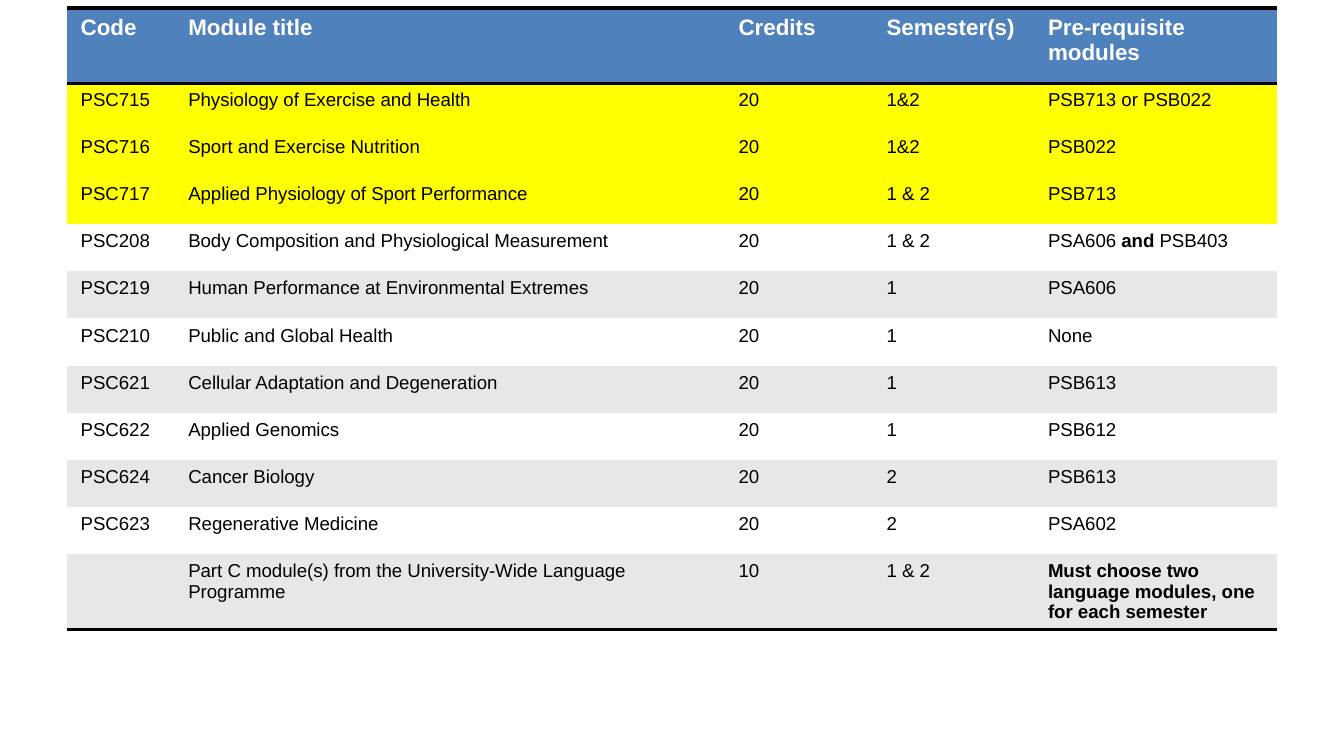
from pptx import Presentation
from pptx.dml.color import RGBColor as RGB
from pptx.oxml import parse_xml as to_xml
from pptx.oxml.ns import nsdecls, qn
from pptx.util import Inches, Pt

HUES = {"head": "4F81BD", "mark": "FFFF00", "band": "E7E7E7",
        "plain": "FFFFFF", "ink": "000000"}
COLS = [0.8, 4.09, 1.1, 1.2, 1.8]
HEAD = ["Code", "Module title", "Credits", "Semester(s)", "Pre-requisite modules"]
ROWS = [
    ["PSC715", "Physiology of Exercise and Health", "20", "1&2", "PSB713 or PSB022"],
    ["PSC716", "Sport and Exercise Nutrition", "20", "1&2", "PSB022"],
    ["PSC717", "Applied Physiology of Sport Performance", "20", "1 & 2", "PSB713"],
    ["PSC208", "Body Composition and Physiological Measurement", "20", "1 & 2",
     "PSA606 **and** PSB403"],
    ["PSC219", "Human Performance at Environmental Extremes", "20", "1", "PSA606"],
    ["PSC210", "Public and Global Health", "20", "1", "None"],
    ["PSC621", "Cellular Adaptation and Degeneration", "20", "1", "PSB613"],
    ["PSC622", "Applied Genomics", "20", "1", "PSB612"],
    ["PSC624", "Cancer Biology", "20", "2", "PSB613"],
    ["PSC623", "Regenerative Medicine", "20", "2", "PSA602"],
    ["", "Part C module(s) from the University-Wide Language Programme", "10", "1 & 2",
     "**Must choose two language modules, one for each semester**"],
]
MARKED = 3
NO_GRID = "{2D5ABB26-0587-4C30-8999-92F81FD0307C}"


def write(frame, text, size=10, hue="ink", bold=False, mark=None):
    para = frame.paragraphs[0]
    para.font.size = Pt(size)
    for i, part in enumerate(text.split("**")):
        if not part:
            continue
        run = para.add_run()
        run.text = part
        font = run.font
        font.name, font.size = "Arial", Pt(size)
        font.bold = bold or i % 2 == 1
        font.color.rgb = RGB.from_string(HUES[hue])
        if mark:
            fill = run._r.rPr.find(qn("a:solidFill"))
            fill.addnext(to_xml(
                f'<a:highlight {nsdecls("a")}><a:srgbClr val="{HUES[mark]}"/></a:highlight>'))


def rule(cell, sides):
    props = cell._tc.get_or_add_tcPr()
    for i, side in enumerate(sides):
        props.insert(i, to_xml(
            f'<a:ln{side} {nsdecls("a")} w="{Pt(2)}"><a:solidFill>'
            f'<a:srgbClr val="{HUES["ink"]}"/></a:solidFill></a:ln{side}>'))


def fill_row(row, texts, back, sides="", **style):
    for cell, text in zip(row.cells, texts):
        cell.fill.solid()
        cell.fill.fore_color.rgb = RGB.from_string(HUES[back])
        write(cell.text_frame, text, **style)
        rule(cell, sides)


def add_modules(slide, left, top, width, height):
    shape = slide.shapes.add_table(len(ROWS) + 1, len(COLS), Inches(left),
                                   Inches(top), Inches(width), Inches(height))
    table = shape.table
    table._tbl.tblPr.find(qn("a:tableStyleId")).text = NO_GRID
    table.horz_banding = False
    for col, share in zip(table.columns, COLS):
        col.width = Inches(width * share / sum(COLS))
    for i, row in enumerate(table.rows):
        row.height = Inches(0.35 if i else 0.56)
    shape.height = Inches(height)
    fill_row(table.rows[0], HEAD, "head", "TB", size=12, hue="plain", bold=True)
    for i, texts in enumerate(ROWS):
        mark = "mark" if i < MARKED else None
        back = mark or ("plain" if i % 2 else "band")
        sides = "B" if i == len(ROWS) - 1 else ""
        fill_row(table.rows[i + 1], texts, back, sides, mark=mark)


def main():
    deck = Presentation()
    deck.slide_width = Inches(10)
    deck.slide_height = deck.slide_width * 9 // 16
    slide = deck.slides.add_slide(deck.slide_layouts[6])
    add_modules(slide, 0.5, 0.06, 9, 4.68)
    deck.save("out.pptx")


if __name__ == "__main__":
    main()
